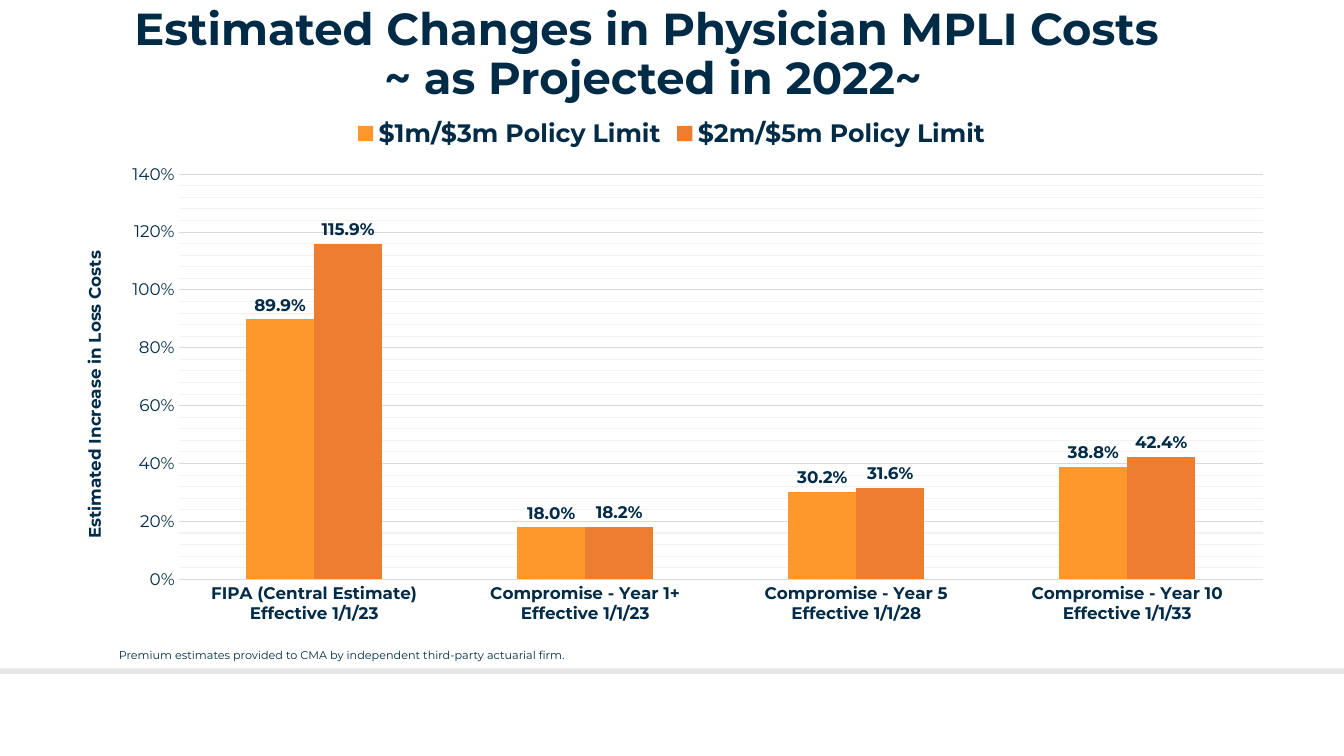
from copy import deepcopy
from dataclasses import dataclass

from lxml import etree
from pptx import Presentation
from pptx.chart.data import CategoryChartData
from pptx.dml.color import RGBColor
from pptx.enum.chart import XL_CHART_TYPE, XL_LABEL_POSITION, XL_LEGEND_POSITION, XL_TICK_MARK
from pptx.enum.shapes import MSO_SHAPE
from pptx.enum.text import MSO_ANCHOR, PP_ALIGN
from pptx.oxml.ns import qn
from pptx.util import Inches, Pt

COLUMNS = XL_CHART_TYPE.COLUMN_CLUSTERED
OUTSIDE_END = XL_LABEL_POSITION.OUTSIDE_END
TOP = XL_LEGEND_POSITION.TOP
NO_TICK = XL_TICK_MARK.NONE
RECT = MSO_SHAPE.RECTANGLE
MIDDLE = MSO_ANCHOR.MIDDLE
CENTER = PP_ALIGN.CENTER


@dataclass(frozen=True)
class Theme:
    font: str = "Montserrat"
    ink: str = "002B47"
    chart_ink: str = "012B47"
    band: str = "E7E6E6"
    grid: str = "D9D9D9"
    minor_grid: str = "F2F2F2"
    series: tuple = ("FF982C", "ED7D31")
    title: int = 32
    legend: int = 18
    label: int = 12
    note: int = 8


class Deck:
    """Hold the theme and the current slide, and add styled elements to it."""

    def __init__(self, prs, theme):
        self.theme = theme
        self.s = prs.slides.add_slide(prs.slide_layouts[5])

    def style(self, font, size, color, bold=False):
        font.name, font.size, font.bold = self.theme.font, Pt(size), bold
        font.color.rgb = RGBColor.from_string(color)

    def rule(self, line, color):
        line.color.rgb = RGBColor.from_string(color)
        line.width = Pt(0.75)

    def band(self, *box):
        sp = self.s.shapes.add_shape(RECT, *map(Inches, box))
        sp.shadow.inherit = False
        sp.fill.solid()
        sp.fill.fore_color.rgb = RGBColor.from_string(self.theme.band)
        sp.line.fill.background()

    def title(self, lines, *box):
        sp = self.s.shapes.title
        sp.left, sp.top, sp.width, sp.height = map(Inches, box)
        tf = sp.text_frame
        tf.margin_left = tf.margin_right = tf.margin_top = 0
        tf.margin_bottom = Inches(0.05)
        tf.vertical_anchor = MIDDLE
        p = tf.paragraphs[0]
        p.text = "\v".join(lines)
        p.alignment, p.line_spacing = CENTER, 0.9
        self.style(p.font, self.theme.title, self.theme.ink, True)

    def note(self, text, *box):
        tf = self.s.shapes.add_textbox(*map(Inches, box)).text_frame
        tf.word_wrap = True
        p = tf.paragraphs[0]
        p.text = text
        self.style(p.font, self.theme.note, self.theme.ink)

    def place(self, parent, **layout):
        for old in parent.findall(qn("c:layout")):
            parent.remove(old)
        node = etree.Element(qn("c:layout"))
        manual = etree.SubElement(node, qn("c:manualLayout"))
        for tag, val in layout.items():
            etree.SubElement(manual, qn(f"c:{tag}")).set("val", str(val))
        text = parent.find(qn("c:tx"))
        parent.insert(0 if text is None else 1, node)

    def gridlines(self, axis):
        axis.has_major_gridlines = axis.has_minor_gridlines = True
        line = axis.major_gridlines.format.line
        self.rule(line, self.theme.minor_grid)
        major = axis._element.find(qn("c:majorGridlines"))
        minor = axis._element.find(qn("c:minorGridlines"))
        minor.append(deepcopy(major.find(qn("c:spPr"))))
        self.rule(line, self.theme.grid)

    def chart(self, categories, series, axis_title, *box):
        t = self.theme
        data = CategoryChartData(number_format="0.0%")
        data.categories = categories
        for name, values in series.items():
            data.add_series(name, values)
        chart = self.s.shapes.add_chart(COLUMNS, *map(Inches, box), data).chart
        self.style(chart.font, t.label, t.chart_ink, True)
        chart.has_title = False
        chart.has_legend = True
        chart.legend.position = TOP
        chart.legend.include_in_layout = False
        self.style(chart.legend.font, t.legend, t.chart_ink, True)

        plot = chart.plots[0]
        plot.gap_width, plot.overlap = 199, 0
        plot.vary_by_categories = False
        for ser, color in zip(plot.series, t.series):
            ser.format.fill.solid()
            ser.format.fill.fore_color.rgb = RGBColor.from_string(color)
            labels = ser.data_labels
            labels.show_value = True
            labels.position = OUTSIDE_END
            labels.number_format, labels.number_format_is_linked = "0.0%", False
            self.style(labels.font, t.label, t.chart_ink, True)

        cat, val = chart.category_axis, chart.value_axis
        for axis, bold in ((cat, True), (val, False)):
            axis.major_tick_mark = axis.minor_tick_mark = NO_TICK
            self.style(axis.tick_labels.font, t.label, t.chart_ink, bold)
        self.rule(cat.format.line, t.grid)
        val.format.line.fill.background()
        val.minimum_scale, val.maximum_scale = 0, 1.4
        val.major_unit, val.minor_unit = 0.2, 0.04
        self.gridlines(val)
        val.tick_labels.number_format = "0%"
        val.tick_labels.number_format_is_linked = False
        tf = val.axis_title.text_frame
        p = tf.paragraphs[0]
        p.text = axis_title
        self.style(p.font, t.label, t.chart_ink, True)
        body = tf._txBody.find(qn("a:bodyPr"))
        body.set("rot", "-5400000")
        body.set("vert", "horz")
        self.place(val.axis_title._element, xMode="edge", yMode="edge", x=0.02, y=0.27)
        self.place(plot._element.getparent(), layoutTarget="inner", xMode="edge",
                   yMode="edge", x=0.1, y=0.13, w=0.88, h=0.77)


def main():
    prs = Presentation()
    prs.slide_width, prs.slide_height = Inches(13.33), Inches(7.5)
    deck = Deck(prs, Theme())
    deck.band(0, 6.63, 13.33, 0.06)
    deck.title(["Estimated Changes in Physician MPLI Costs ", "~ as Projected in 2022~"],
               0.37, 0.1, 12.22, 0.95)
    deck.chart(
        ["FIPA (Central Estimate)\nEffective 1/1/23", "Compromise - Year 1+\nEffective 1/1/23",
         "Compromise - Year 5\nEffective 1/1/28", "Compromise - Year 10\nEffective 1/1/33"],
        {"$1m/$3m Policy Limit": (0.899, 0.18, 0.302, 0.388),
         "$2m/$5m Policy Limit": (1.159, 0.182, 0.316, 0.424)},
        "Estimated Increase in Loss Costs", 0.55, 1.05, 12.22, 5.22)
    deck.note("Premium estimates provided to CMA by independent third-party actuarial firm.",
              1.08, 6.38, 5.13, 0.24)
    prs.save("out.pptx")


if __name__ == "__main__":
    main()
